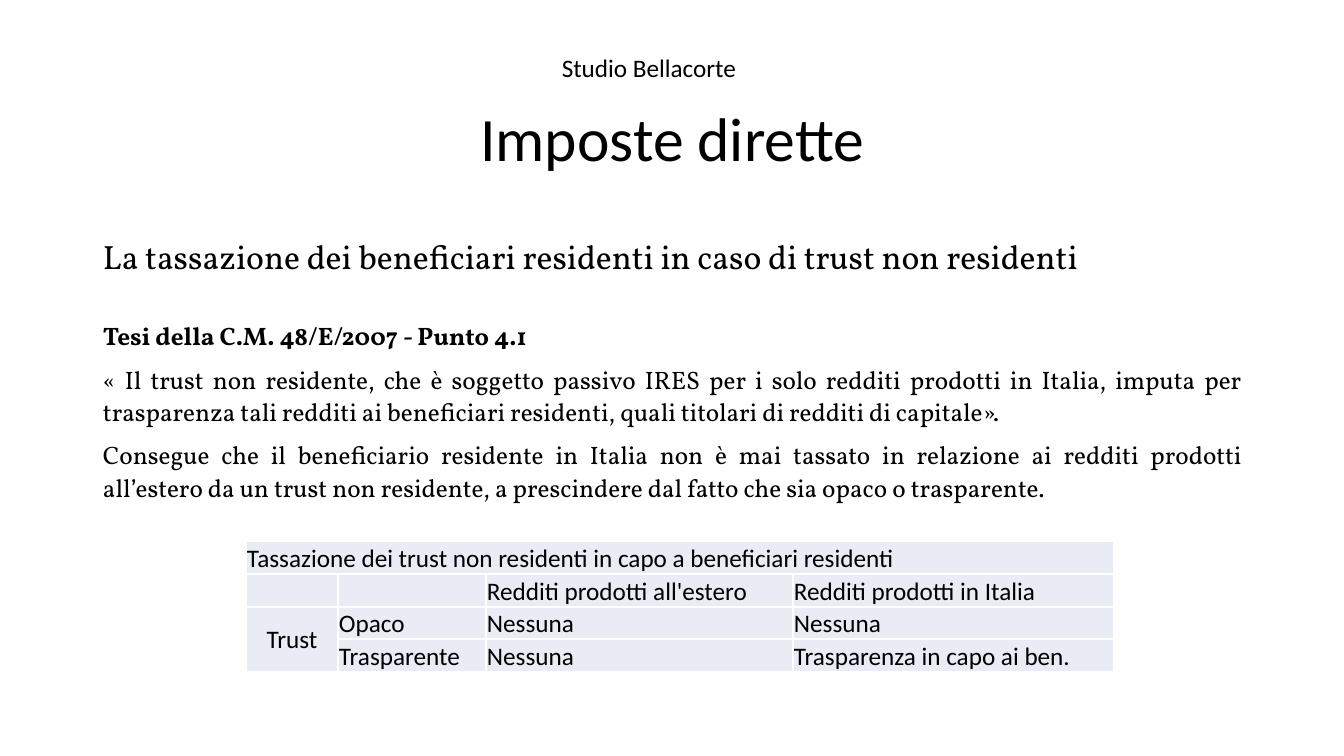
from collections import namedtuple
from dataclasses import dataclass

from lxml import etree
from pptx import Presentation
from pptx.dml.color import RGBColor
from pptx.enum.text import MSO_ANCHOR, MSO_AUTO_SIZE, PP_ALIGN
from pptx.oxml.ns import qn
from pptx.util import Emu, Pt

CENTER, JUSTIFY, LEFT = PP_ALIGN.CENTER, PP_ALIGN.JUSTIFY, PP_ALIGN.LEFT
MIDDLE, BOTTOM, TOP = MSO_ANCHOR.MIDDLE, MSO_ANCHOR.BOTTOM, MSO_ANCHOR.TOP
NO_AUTOFIT = MSO_AUTO_SIZE.NONE
Box = namedtuple("Box", "left top width height")


@dataclass(frozen=True)
class Theme:
    ink: str = "000000"
    cell: str = "E9EBF5"
    rule: str = "FFFFFF"
    sans: str = "Calibri"
    serif: str = "Vollkorn"
    title: int = 44
    heading: int = 24
    text: int = 18


THEME = Theme()
FIRM = "Studio Bellacorte"
TITLE = "Imposte dirette"
HEADING = "La tassazione dei beneficiari residenti in caso di trust non residenti"
THESIS = "Tesi della C.M. 48/E/2007 - Punto 4.1"
ARGUMENTS = [
    "« Il trust non residente, che è soggetto passivo IRES per i solo redditi "
    "prodotti in Italia, imputa per trasparenza tali redditi ai beneficiari "
    "residenti, quali titolari di redditi di capitale».",
    "Consegue che il beneficiario residente in Italia non è mai tassato in "
    "relazione ai redditi prodotti all’estero da un trust non residente, a "
    "prescindere dal fatto che sia opaco o trasparente.",
]
TAXATION = [
    ["Tassazione dei trust non residenti in capo a beneficiari residenti", "", "", ""],
    ["", "", "Redditi prodotti all'estero", "Redditi prodotti in Italia"],
    ["Trust", "Opaco", "Nessuna", "Nessuna"],
    ["", "Trasparente", "Nessuna", "Trasparenza in capo ai ben."],
]
COLUMN_WIDTHS = [92, 148, 307, 321]
ROW_HEIGHTS = [33, 33, 32, 33]


def px(length):
    return Emu(round(length * 914400 / 100.8))


def place(shape, box):
    shape.left, shape.top, shape.width, shape.height = map(px, box)


def set_margins(holder, left, top, right, bottom):
    holder.margin_left, holder.margin_top = px(left), px(top)
    holder.margin_right, holder.margin_bottom = px(right), px(bottom)


def write(paragraph, text, face, size, align, bold=False):
    paragraph.text = text
    paragraph.alignment = align
    font = paragraph.font
    font.name, font.size, font.bold = face, Pt(size), bold
    font.color.rgb = RGBColor.from_string(THEME.ink)


def add_firm(slide, box):
    frame = slide.shapes.add_textbox(*map(px, box)).text_frame
    frame.word_wrap = True
    write(frame.paragraphs[0], FIRM, THEME.sans, THEME.text, CENTER)


def fill_title(title, box):
    place(title, box)
    frame = title.text_frame
    frame.auto_size, frame.vertical_anchor = NO_AUTOFIT, MIDDLE
    set_margins(frame, 20, 10, 20, 10)
    write(frame.paragraphs[0], TITLE, THEME.sans, THEME.title, CENTER)
    frame.paragraphs[0].line_spacing = 0.9


def fill_body(body, box):
    place(body, box)
    frame = body.text_frame
    frame.auto_size, frame.vertical_anchor = NO_AUTOFIT, TOP
    set_margins(frame, 10, 5, 10, 5)
    # text, size, bold, line spacing, space after
    lines = [(HEADING, THEME.heading, False, 0.9, 30),
             (THESIS, THEME.text, True, 1.07, 8)]
    lines += [(argument, THEME.text, False, 1.07, 8) for argument in ARGUMENTS]
    for index, (text, size, bold, spacing, after) in enumerate(lines):
        paragraph = frame.add_paragraph() if index else frame.paragraphs[0]
        write(paragraph, text, THEME.serif, size, JUSTIFY, bold)
        paragraph.line_spacing = spacing
        paragraph.space_before, paragraph.space_after = Pt(0), Pt(after)
        properties = paragraph._p.get_or_add_pPr()
        properties.set("marL", "0")
        properties.set("indent", "0")
        etree.SubElement(properties, qn("a:buNone"))


def add_borders(cell):
    properties = cell._tc.get_or_add_tcPr()
    for index, side in enumerate(("lnL", "lnR", "lnT", "lnB")):
        line = etree.Element(qn(f"a:{side}"), w=str(Pt(1)))
        fill = etree.SubElement(line, qn("a:solidFill"))
        etree.SubElement(fill, qn("a:srgbClr"), val=THEME.rule)
        properties.insert(index, line)


def add_taxation_table(slide, box):
    table = slide.shapes.add_table(
        len(ROW_HEIGHTS), len(COLUMN_WIDTHS), *map(px, box)).table
    table.first_row = table.horz_banding = False
    for column, width in zip(table.columns, COLUMN_WIDTHS):
        column.width = px(width)
    for row, height, texts in zip(table.rows, ROW_HEIGHTS, TAXATION):
        row.height = px(height)
        for cell, text in zip(row.cells, texts):
            spans_rows = text == "Trust"
            write(cell.text_frame.paragraphs[0], text, THEME.sans, THEME.text,
                  CENTER if spans_rows else LEFT)
            cell.vertical_anchor = MIDDLE if spans_rows else BOTTOM
            set_margins(cell, 1, 1, 1, 0)
            cell.fill.solid()
            cell.fill.fore_color.rgb = RGBColor.from_string(THEME.cell)
            add_borders(cell)
    table.cell(0, 0).merge(table.cell(0, 3))
    table.cell(2, 0).merge(table.cell(3, 0))


def main():
    deck = Presentation()
    deck.slide_width, deck.slide_height = px(1344), px(756)
    slide = deck.slides.add_slide(deck.slide_layouts[1])
    title, body = slide.placeholders
    fill_title(title, Box(93, 96, 1159, 91))
    fill_body(body, Box(93, 235, 1159, 290))
    add_taxation_table(slide, Box(246, 541, sum(COLUMN_WIDTHS), sum(ROW_HEIGHTS)))
    add_firm(slide, Box(397, 47, 504, 40))
    deck.save("out.pptx")


if __name__ == "__main__":
    main()
